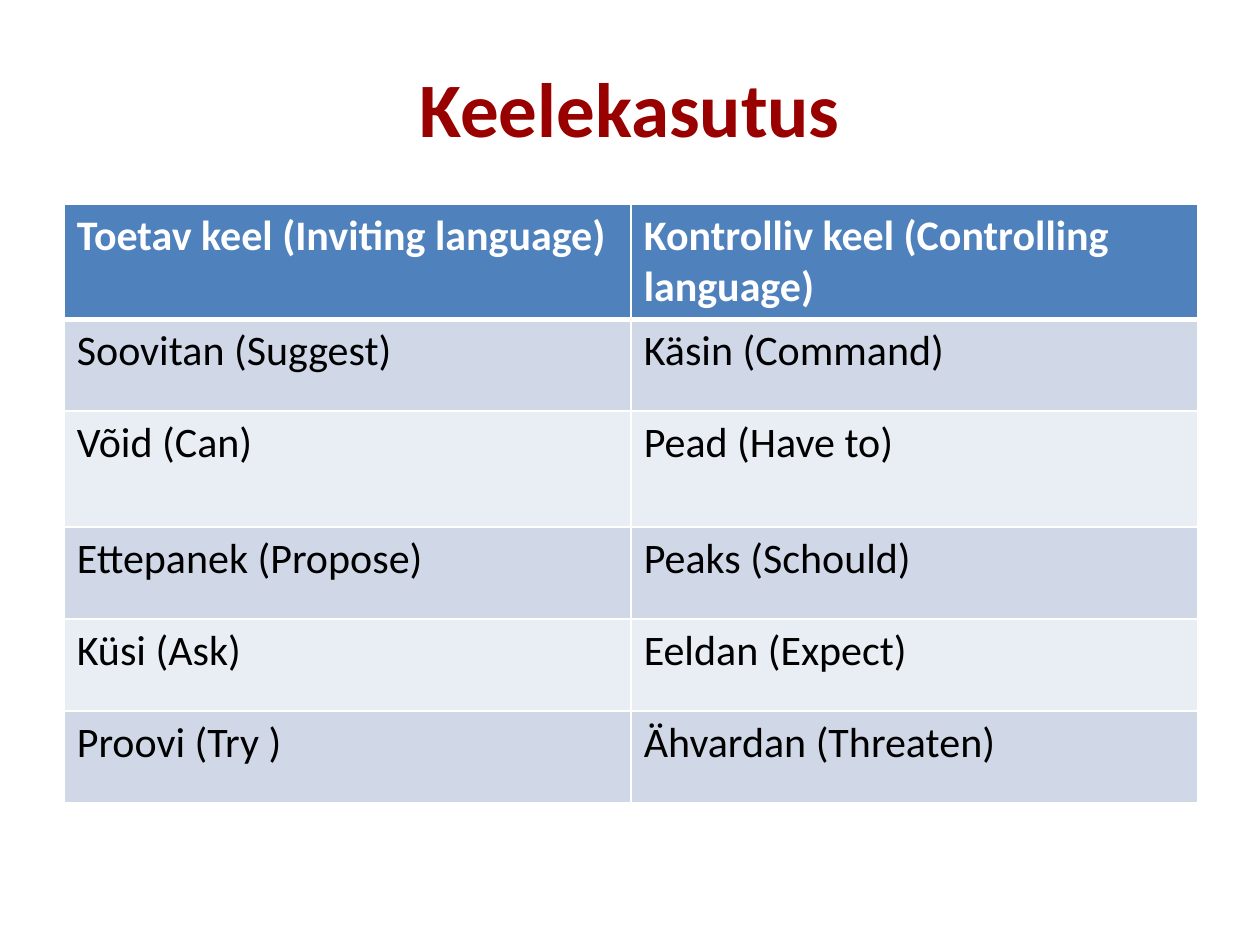
from dataclasses import dataclass

import pptx
import pptx.dml.color
import pptx.enum.text
import pptx.oxml
import pptx.oxml.ns
import pptx.util

SLIDE_WIDTH = pptx.util.Inches(10)
SLIDE_HEIGHT = pptx.util.Inches(7.5)


@dataclass(frozen=True)
class Theme:
    font: str = "Calibri"
    title_size: int = 44
    table_size: int = 24
    title: str = "990000"
    header: str = "4F81BD"
    bands: tuple[str, str] = ("D0D8E8", "E9EDF4")
    light: str = "FFFFFF"
    dark: str = "000000"
    rule: float = 1
    header_rule: float = 3


@dataclass(frozen=True)
class Pair:
    inviting: str
    controlling: str
    height: float = 0.73  # inches


THEME = Theme()
PAIRS = [
    Pair("Toetav keel (Inviting language)", "Kontrolliv keel (Controlling language)", 0.9),
    Pair("Soovitan (Suggest)", "Käsin (Command)"),
    Pair("Võid (Can)", "Pead (Have to)", 0.92),
    Pair("Ettepanek (Propose)", "Peaks (Schould)"),
    Pair("Küsi (Ask)", "Eeldan (Expect)"),
    Pair("Proovi (Try )", "Ähvardan (Threaten)"),
]


def style_text(paragraph, size: float, color: str, bold: bool) -> None:
    font = paragraph.font
    font.name, font.size, font.bold = THEME.font, pptx.util.Pt(size), bold
    font.color.rgb = pptx.dml.color.RGBColor.from_string(color)


def add_border(cell, side: str, width: float) -> None:
    cell._tc.get_or_add_tcPr().append(pptx.oxml.parse_xml(
        f'<a:ln{side} {pptx.oxml.ns.nsdecls("a")} w="{pptx.util.Pt(width)}">'
        f'<a:solidFill><a:srgbClr val="{THEME.light}"/></a:solidFill></a:ln{side}>'))


def fill_cell(cell, text: str, row: int) -> None:
    is_header = row == 0
    cell.text = text
    style_text(cell.text_frame.paragraphs[0], THEME.table_size,
               THEME.light if is_header else THEME.dark, is_header)
    for side in "LRTB":
        beside_header = (row, side) in ((0, "B"), (1, "T"))
        add_border(cell, side, THEME.header_rule if beside_header else THEME.rule)
    cell.fill.solid()
    cell.fill.fore_color.rgb = pptx.dml.color.RGBColor.from_string(
        THEME.header if is_header else THEME.bands[(row - 1) % 2])


def add_title(slide, text: str) -> None:
    heading = slide.shapes.title
    heading.left, heading.top = int(SLIDE_WIDTH * 0.05), int(SLIDE_HEIGHT * 0.04)
    heading.width, heading.height = int(SLIDE_WIDTH * 0.9), int(SLIDE_HEIGHT * 0.145)
    heading.text_frame.text = text
    heading.text_frame.vertical_anchor = pptx.enum.text.MSO_ANCHOR.MIDDLE
    paragraph = heading.text_frame.paragraphs[0]
    paragraph.alignment = pptx.enum.text.PP_ALIGN.CENTER
    style_text(paragraph, THEME.title_size, THEME.title, True)


def add_comparison(slide, pairs: list[Pair]) -> None:
    heights = [pptx.util.Inches(pair.height) for pair in pairs]
    comparison = slide.shapes.add_table(
        len(pairs), 2, int(SLIDE_WIDTH * 0.051), int(SLIDE_HEIGHT * 0.216),
        int(SLIDE_WIDTH * 0.9), sum(heights)).table
    for row, (pair, height) in enumerate(zip(pairs, heights)):
        comparison.rows[row].height = height
        for column, phrase in enumerate((pair.inviting, pair.controlling)):
            fill_cell(comparison.cell(row, column), phrase, row)


def main() -> None:
    deck = pptx.Presentation()
    deck.slide_width, deck.slide_height = SLIDE_WIDTH, SLIDE_HEIGHT
    slide = deck.slides.add_slide(deck.slide_layouts.get_by_name("Title Only"))
    # Heading
    add_title(slide, "Keelekasutus")
    # Inviting and controlling phrases side by side
    add_comparison(slide, PAIRS)
    deck.save("out.pptx")


if __name__ == "__main__":
    main()
